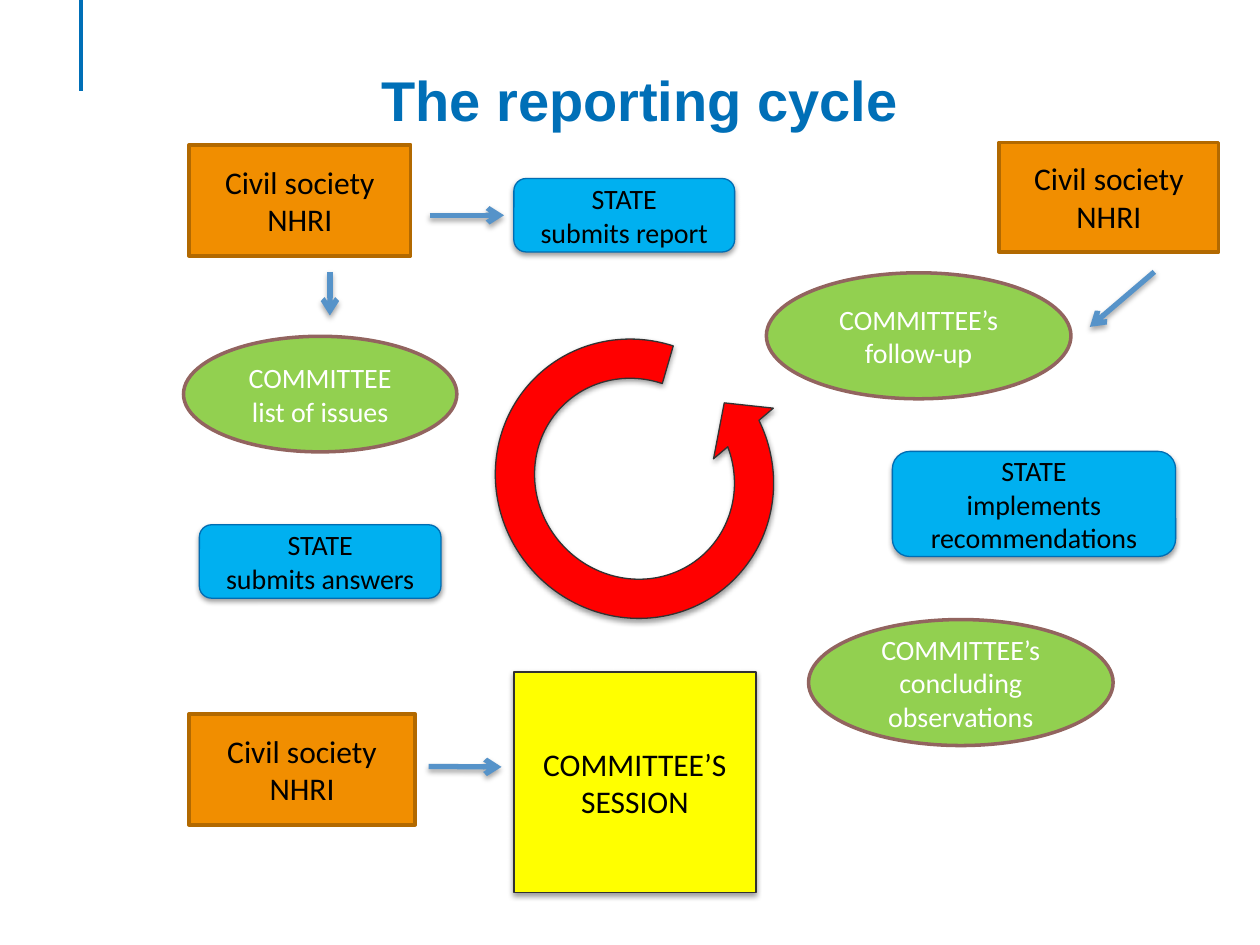
from lxml import etree
from pptx import Presentation
from pptx.dml.color import RGBColor
from pptx.enum.shapes import MSO_CONNECTOR, MSO_SHAPE
from pptx.enum.text import MSO_ANCHOR, MSO_AUTO_SIZE, PP_ALIGN
from pptx.oxml.ns import qn
from pptx.util import Cm, Pt

RECT = MSO_SHAPE.RECTANGLE
ROUNDED = MSO_SHAPE.ROUNDED_RECTANGLE
OVAL = MSO_SHAPE.OVAL
CIRCULAR_ARROW = MSO_SHAPE.CIRCULAR_ARROW
STRAIGHT = MSO_CONNECTOR.STRAIGHT
MIDDLE = MSO_ANCHOR.MIDDLE
CENTER = PP_ALIGN.CENTER
NO_AUTOFIT = MSO_AUTO_SIZE.NONE

TITLE_BLUE = RGBColor(0x00, 0x6F, 0xB7)
STATE_BLUE = RGBColor(0x00, 0xB0, 0xF0)
STATE_LINE = RGBColor(0x00, 0x6D, 0xB3)
GREEN = RGBColor(0x92, 0xD0, 0x50)
GREEN_LINE = RGBColor(0x92, 0x64, 0x5F)
ORANGE = RGBColor(0xF1, 0x8E, 0x00)
ORANGE_LINE = RGBColor(0xB2, 0x69, 0x00)
YELLOW = RGBColor(0xFF, 0xFF, 0x00)
RED = RGBColor(0xFF, 0x00, 0x00)
DARK = RGBColor(0x32, 0x32, 0x32)
ARROW_BLUE = RGBColor(0x56, 0x93, 0xC9)
BLACK = RGBColor(0x00, 0x00, 0x00)
WHITE = RGBColor(0xFF, 0xFF, 0xFF)

# Look of each role: shape, fill, line, line width, text size, text colour, shadow
STATE = (ROUNDED, STATE_BLUE, STATE_LINE, 0.75, 16, BLACK, True)
COMMITTEE = (OVAL, GREEN, GREEN_LINE, 2, 16, WHITE, False)
CIVIL_SOCIETY = (RECT, ORANGE, ORANGE_LINE, 2, 18, BLACK, False)
SESSION = (RECT, YELLOW, DARK, 0.75, 18, BLACK, True)
CYCLE = (CIRCULAR_ARROW, RED, DARK, 0.75, 16, BLACK, True)

CIVIL_TEXT = "Civil society\nNHRI"

# Steps of the cycle: role, text, left, top, width, height in cm
STEPS = [
    (STATE, "STATE\nsubmits report", 10.36, 3.6, 4.45, 1.48),
    (COMMITTEE, "COMMITTEE\nlist of issues", 3.7, 6.78, 5.51, 2.33),
    (STATE, "STATE\nsubmits answers", 4.02, 10.58, 4.87, 1.48),
    (COMMITTEE, "COMMITTEE’s\nconcluding observations", 16.3, 12.49, 6.14, 2.54),
    (CIVIL_SOCIETY, CIVIL_TEXT, 3.81, 14.39, 4.56, 2.24),
    (SESSION, "COMMITTEE’S SESSION", 10.36, 13.55, 4.88, 4.45),
    (STATE, "STATE\nimplements recommendations", 17.99, 9.1, 5.71, 2.12),
    (COMMITTEE, "COMMITTEE’s\nfollow-up", 15.45, 5.5, 6.14, 2.54),
    (CIVIL_SOCIETY, CIVIL_TEXT, 20.14, 2.87, 4.43, 2.21),
    (CIVIL_SOCIETY, CIVIL_TEXT, 3.81, 2.92, 4.47, 2.24),
]

# Input arrows: from x, y to x, y in cm
ARROWS = [
    (8.64, 15.45, 10.11, 15.46),
    (23.27, 5.48, 21.97, 6.59),
    (8.66, 4.34, 10.16, 4.34),
    (6.65, 5.48, 6.65, 6.36),
]


def set_effects(s, shadow=False, dist=1.6, alpha=38):
    """Replace the theme effect by a soft shadow below, or by none."""
    effects = etree.SubElement(s.element.spPr, qn("a:effectLst"))
    if shadow:
        outer = etree.SubElement(
            effects, qn("a:outerShdw"), blurRad=str(Pt(3.1)),
            dist=str(Pt(dist)), dir="5400000", rotWithShape="0")
        color = etree.SubElement(outer, qn("a:srgbClr"), val="000000")
        etree.SubElement(color, qn("a:alpha"), val=str(alpha * 1000))


def format_text(tf, name, size, color, bold=False):
    tf.word_wrap = True
    tf.vertical_anchor = MIDDLE
    for p in tf.paragraphs:
        p.alignment = CENTER
        for r in p.runs:
            r.font.name = name
            r.font.size = Pt(size)
            r.font.bold = bold
            r.font.color.rgb = color


def add_title(slide, text):
    s = slide.shapes.title
    s.left, s.top, s.width, s.height = Cm(1.47), Cm(1.07), Cm(22.86), Cm(1.85)
    tf = s.text_frame
    tf.text = text
    tf.auto_size = NO_AUTOFIT
    format_text(tf, "Arial", 32, TITLE_BLUE, bold=True)


def add_step(slide, role, text, left, top, width, height):
    kind, fill, line, line_width, size, color, shadow = role
    s = slide.shapes.add_shape(kind, Cm(left), Cm(top), Cm(width), Cm(height))
    s.fill.solid()
    s.fill.fore_color.rgb = fill
    s.line.color.rgb = line
    s.line.width = Pt(line_width)
    set_effects(s, shadow)
    if text:
        s.text_frame.text = text
        format_text(s.text_frame, "Calibri", size, color)
    return s


def add_cycle_arrow(slide):
    s = add_step(slide, CYCLE, "", 9.63, 6.4, 6.32, 6.5)
    for i, value in enumerate((0.125, 10.594, 204.577, 19.274, 0.125)):
        s.adjustments[i] = value
    s.rotation = 138.4
    s.element.spPr.find(qn("a:xfrm")).set("flipH", "1")


def add_line(slide, x1, y1, x2, y2, color, width):
    c = slide.shapes.add_connector(STRAIGHT, Cm(x1), Cm(y1), Cm(x2), Cm(y2))
    c.line.color.rgb = color
    c.line.width = Pt(width)
    return c


def add_arrow(slide, *ends):
    c = add_line(slide, *ends, ARROW_BLUE, 3)
    etree.SubElement(c.element.spPr.find(qn("a:ln")), qn("a:tailEnd"), type="arrow")
    set_effects(c, True, dist=1.8, alpha=35)


def main():
    prs = Presentation()
    prs.slide_width, prs.slide_height = Cm(25.4), Cm(19.05)
    slide = prs.slides.add_slide(prs.slide_layouts[5])

    # Accent line and title
    set_effects(add_line(slide, 1.63, 0, 1.63, 1.83, TITLE_BLUE, 2))
    add_title(slide, "The reporting cycle")

    # Steps around the cycle
    for step in STEPS:
        add_step(slide, *step)
    add_cycle_arrow(slide)

    # Input from civil society
    for ends in ARROWS:
        add_arrow(slide, *ends)

    prs.save("out.pptx")


if __name__ == "__main__":
    main()
